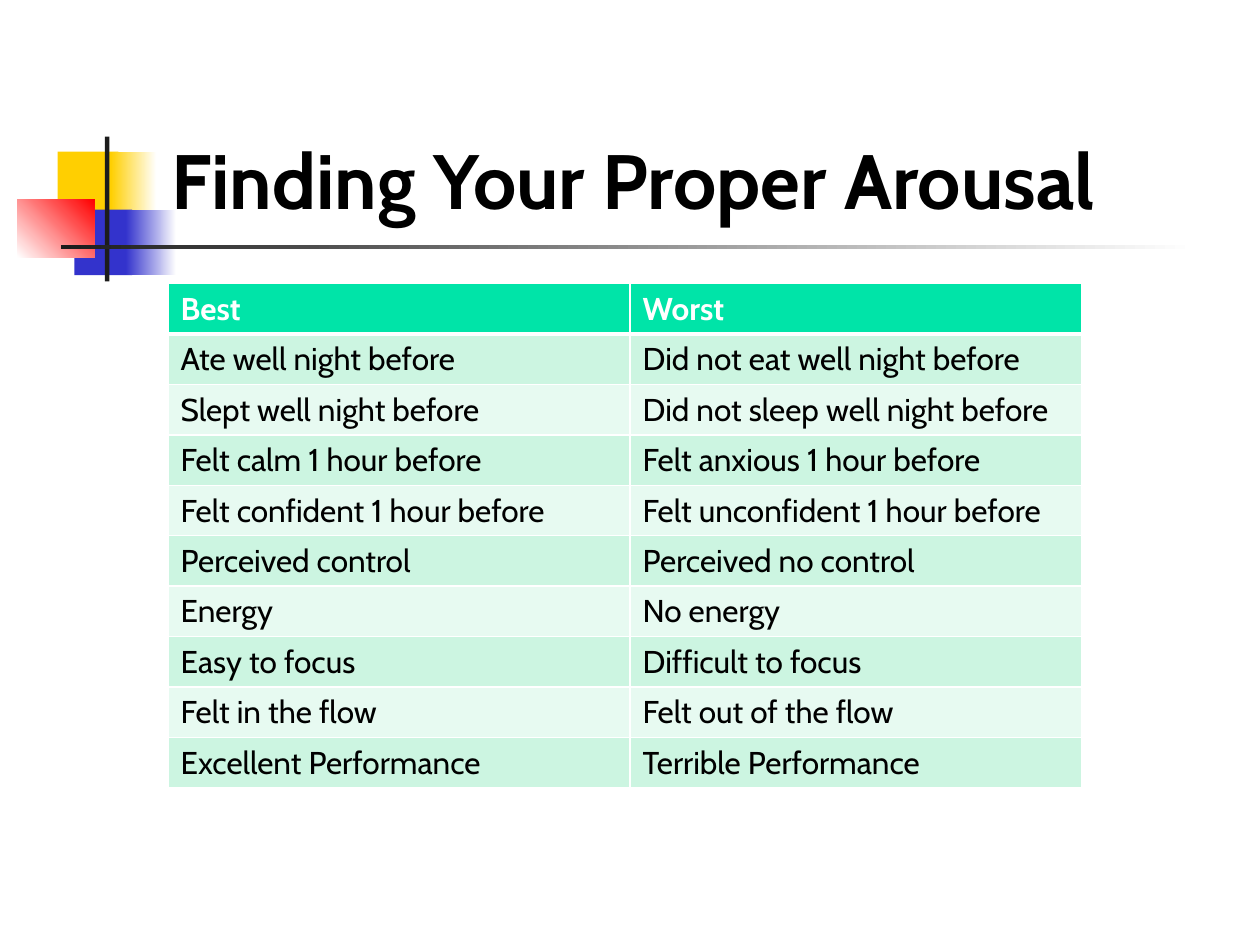
import lxml.etree
import pptx
import pptx.dml.color
import pptx.enum.shapes
import pptx.enum.text
import pptx.oxml.ns
import pptx.util

Pt = pptx.util.Pt
FONT = "Cabin"
WHITE, BLACK, CHARCOAL = "FFFFFF", "000000", "1C1C1C"
YELLOW, BLUE, RED = "FFCF01", "3333CC", "FF0000"
HEADER_GREEN, ROW_GREENS = "00E4A8", ("CCF5E1", "E7FAF1")

ROWS = [
    ("Best", "Worst"),
    ("Ate well night before", "Did not eat well night before"),
    ("Slept well night before", "Did not sleep well night before"),
    ("Felt calm 1 hour before", "Felt anxious 1 hour before"),
    ("Felt confident 1 hour before", "Felt unconfident 1 hour before"),
    ("Perceived control", "Perceived no control"),
    ("Energy", "No energy"),
    ("Easy to focus", "Difficult to focus"),
    ("Felt in the flow", "Felt out of the flow"),
    ("Excellent Performance", "Terrible Performance"),
]


def color(hex_string):
    """Return the RGB colour for a hex string."""
    return pptx.dml.color.RGBColor.from_string(hex_string)


def write_text(frame, text, size=18, fill=BLACK, bold=False):
    """Write one formatted run into a text frame."""
    run = frame.paragraphs[0].add_run()
    run.text = text
    run.font.name = FONT
    run.font.size = Pt(size)
    run.font.bold = bold
    run.font.color.rgb = color(fill)


def add_block(slide, left, top, width, height, start, end=None, angle=0):
    """Add a borderless rectangle, solid or fading from start to end."""
    block = slide.shapes.add_shape(
        pptx.enum.shapes.MSO_SHAPE.RECTANGLE,
        Pt(left), Pt(top), Pt(width), Pt(height))
    block.shadow.inherit = False
    block.line.fill.background()
    if end is None:
        block.fill.solid()
        block.fill.fore_color.rgb = color(start)
        return
    block.fill.gradient()
    block.fill.gradient_angle = angle
    for stop, shade, position in zip(block.fill.gradient_stops, (start, end), (0, 1)):
        stop.color.rgb = color(shade)
        stop.position = position


def add_motif(slide, left, top):
    """Place the overlapping squares and the crossing bars."""
    blocks = [
        (23, 8.6, 34.6, 37.4, YELLOW),
        (53.4, 8.6, 26, 37.4, YELLOW, WHITE),
        (32.5, 41.8, 33.1, 37.4, BLUE),
        (62, 41.8, 28.8, 37.4, BLUE, WHITE),
        (0, 35.8, 44, 33.4, WHITE, RED, 45),
        (50, 0, 2.5, 82.8, CHARCOAL),
        (24.8, 62, 648, 2.5, CHARCOAL, WHITE),
    ]
    for x, y, *rest in blocks:
        add_block(slide, left + x, top + y, *rest)


def add_title(slide, left, top, width, height):
    """Place the slide title on the bottom of its box."""
    box = slide.shapes.add_textbox(Pt(left), Pt(top), Pt(width), Pt(height))
    box.text_frame.word_wrap = True
    box.text_frame.vertical_anchor = pptx.enum.text.MSO_ANCHOR.BOTTOM
    write_text(box.text_frame, "Finding Your Proper Arousal", size=44, bold=True)


def set_borders(cell, top=1, bottom=1):
    """Draw white borders of the given widths around a cell."""
    qn = pptx.oxml.ns.qn
    properties = cell._tc.get_or_add_tcPr()
    sides = (("L", 1), ("R", 1), ("T", top), ("B", bottom))
    for index, (side, width) in enumerate(sides):
        border = lxml.etree.Element(qn("a:ln" + side), w=str(Pt(width)))
        fill = lxml.etree.SubElement(border, qn("a:solidFill"))
        lxml.etree.SubElement(fill, qn("a:srgbClr"), val=WHITE)
        properties.insert(index, border)


def add_comparison(slide, left, top, column_widths, row_height):
    """Place the table that compares best and worst performances."""
    table = slide.shapes.add_table(
        len(ROWS), len(column_widths), Pt(left), Pt(top),
        Pt(sum(column_widths)), Pt(row_height * len(ROWS))).table
    for column, width in zip(table.columns, column_widths):
        column.width = Pt(width)
    for r, row in enumerate(ROWS):
        table.rows[r].height = Pt(row_height)
        header = r == 0
        for c, text in enumerate(row):
            cell = table.cell(r, c)
            cell.fill.solid()
            cell.fill.fore_color.rgb = color(
                HEADER_GREEN if header else ROW_GREENS[(r - 1) % 2])
            set_borders(cell, top=3 if r == 1 else 1, bottom=3 if header else 1)
            write_text(cell.text_frame, text, bold=header,
                       fill=WHITE if header else BLACK)


def main():
    """Build the slide and save it."""
    presentation = pptx.Presentation()
    presentation.slide_width, presentation.slide_height = Pt(720), Pt(540)
    slide = presentation.slides.add_slide(presentation.slide_layouts[6])
    add_motif(slide, 10, 78)
    add_title(slide, 91, 16.6, 613.4, 115.2)
    add_comparison(slide, 96, 162, (264, 258), 28.8)
    presentation.save("out.pptx")


if __name__ == "__main__":
    main()
